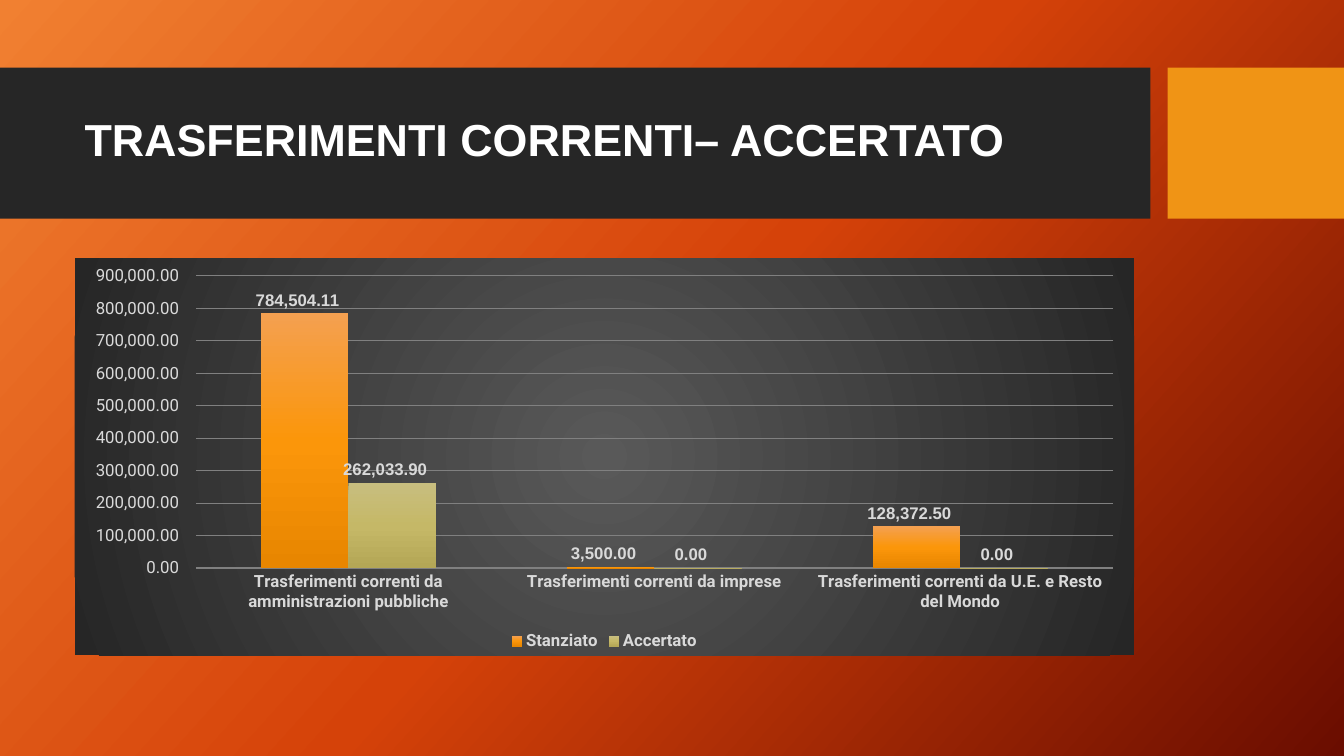
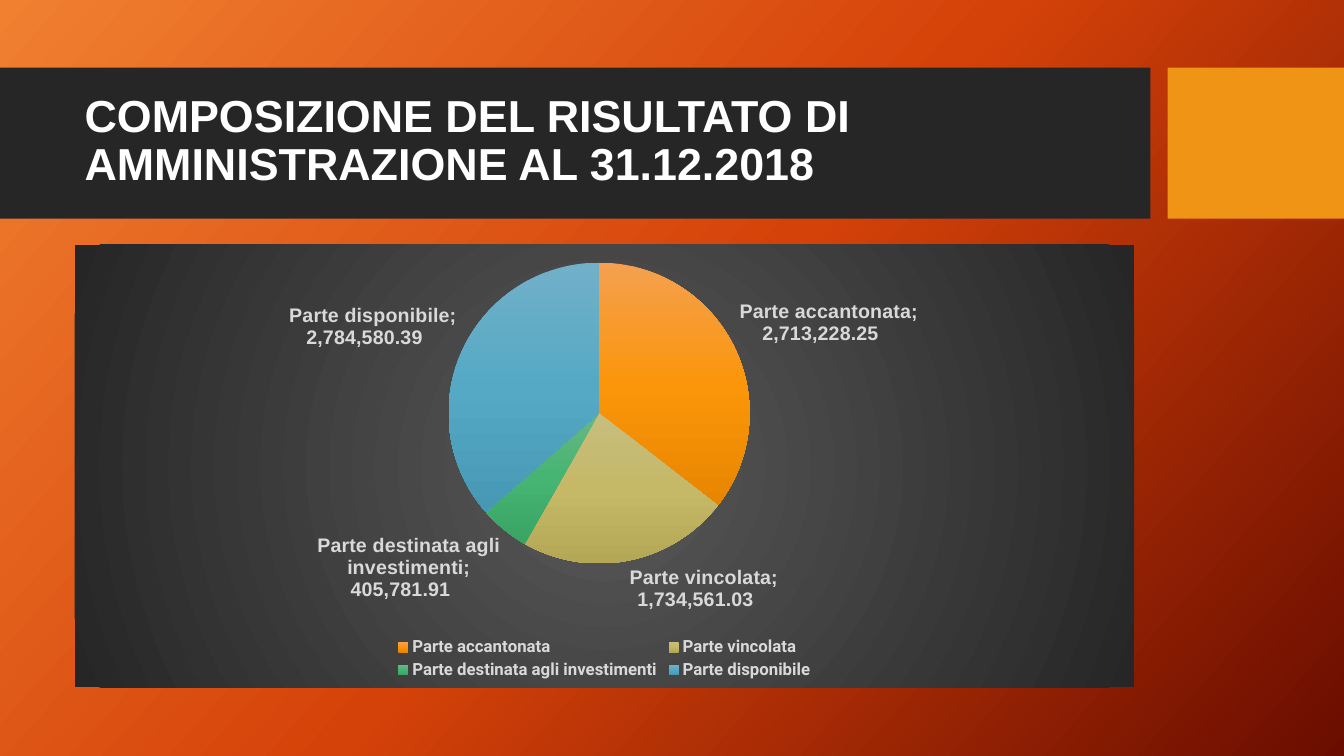
import pptx
import pptx.chart.data
import pptx.dml.color
import pptx.enum.chart
import pptx.enum.shapes
import pptx.enum.text
import pptx.oxml
import pptx.oxml.ns
import pptx.util
from pptx.dml.color import RGBColor
from pptx.oxml.ns import qn
from pptx.util import Inches

WHITE = RGBColor(0xFF, 0xFF, 0xFF)
LIGHT_GREY = RGBColor(0xD9, 0xD9, 0xD9)
GRID_GREY = RGBColor(0x80, 0x80, 0x80)
MID_GREY = RGBColor(0x59, 0x59, 0x59)
CHARCOAL = RGBColor(0x26, 0x26, 0x26)
AMBER = RGBColor(0xF0, 0x94, 0x15)
BACKGROUND = (RGBColor(0xF1, 0x80, 0x31), RGBColor(0xD5, 0x42, 0x09), RGBColor(0x6A, 0x0D, 0x00))
DATA_GRADIENTS = (
    (RGBColor(0xF4, 0xA0, 0x50), RGBColor(0xFB, 0x96, 0x0A), RGBColor(0xE8, 0x86, 0x00)),
    (RGBColor(0xC8, 0xBE, 0x7F), RGBColor(0xC5, 0xB8, 0x67), RGBColor(0xB4, 0xA7, 0x56)),
    (RGBColor(0x67, 0xB8, 0x84), RGBColor(0x46, 0xB4, 0x72), RGBColor(0x3A, 0xA4, 0x64)),
    (RGBColor(0x71, 0xB0, 0xC8), RGBColor(0x55, 0xA9, 0xC5), RGBColor(0x47, 0x98, 0xB4)),
)
NAMESPACES = pptx.oxml.ns.nsdecls("a", "c")
NUMBER_FORMAT = "#,##0.00\\ _€"
LEFT, WIDTH = Inches(0.74), Inches(10.51)


def set_gradient(element, colors, angle=None):
    """Replace the first solid fill with evenly spaced stops; radial without an angle."""
    stops = "".join(
        f'<a:gs pos="{100000 * index // (len(colors) - 1)}"><a:srgbClr val="{color}"/></a:gs>'
        for index, color in enumerate(colors))
    if angle is None:
        direction = ('<a:path path="circle"><a:fillToRect l="50000" t="50000" '
                     'r="50000" b="50000"/></a:path>')
    else:
        direction = f'<a:lin ang="{angle * 60000}" scaled="0"/>'
    solid = element.find(".//" + qn("a:solidFill"))
    solid.getparent().replace(solid, pptx.oxml.parse_xml(
        f'<a:gradFill {NAMESPACES} rotWithShape="1"><a:gsLst>{stops}</a:gsLst>{direction}</a:gradFill>'))


def add_text(slide, text, left, top, width, height, size, color, font="Arial", bold=False):
    box = slide.shapes.add_textbox(left, top, width, height)
    frame = box.text_frame
    frame.word_wrap = True
    frame.vertical_anchor = pptx.enum.text.MSO_ANCHOR.MIDDLE
    paragraph = frame.paragraphs[0]
    paragraph.line_spacing = 0.9
    run = paragraph.add_run()
    run.text = text
    run.font.name, run.font.size, run.font.bold = font, pptx.util.Pt(size), bold
    run.font.color.rgb = color


presentation = pptx.Presentation()
presentation.slide_width, presentation.slide_height = Inches(13.33), Inches(7.5)

# Shared background
master = presentation.slide_master
master.background.fill.solid()
master.background.fill.fore_color.rgb = BACKGROUND[0]
set_gradient(master.element, BACKGROUND, angle=42)

SLIDES = (
    {
        "title": "TRASFERIMENTI CORRENTI– ACCERTATO",
        "type": pptx.enum.chart.XL_CHART_TYPE.COLUMN_CLUSTERED,
        "top": 2.56, "height": 3.94, "label_size": 12,
        "categories": ("Trasferimenti correnti da amministrazioni pubbliche",
                       "Trasferimenti correnti da imprese",
                       "Trasferimenti correnti da U.E. e Resto del Mondo"),
        "series": {"Stanziato": (784504.11, 3500, 128372.5), "Accertato": (262033.9, 0, 0)},
    },
    {
        "title": "COMPOSIZIONE DEL RISULTATO DI AMMINISTRAZIONE AL 31.12.2018",
        "type": pptx.enum.chart.XL_CHART_TYPE.PIE,
        "top": 2.43, "height": 4.39, "label_size": 14,
        "categories": ("Parte accantonata", "Parte vincolata",
                       "Parte destinata agli investimenti", "Parte disponibile"),
        "series": {"Series 1": (2713228.25, 1734561.03, 405781.91, 2784580.39)},
    },
)

for content in SLIDES:
    slide = presentation.slides.add_slide(presentation.slide_layouts[6])
    is_pie = content["type"] == pptx.enum.chart.XL_CHART_TYPE.PIE

    # Title band and accent block
    for left, width, color in ((0, 11.41, CHARCOAL), (11.58, 1.75, AMBER)):
        band = slide.shapes.add_shape(pptx.enum.shapes.MSO_SHAPE.RECTANGLE,
                                      Inches(left), Inches(0.67), Inches(width), Inches(1.5))
        band.shadow.inherit = False
        band.fill.solid()
        band.fill.fore_color.rgb = color
        band.line.fill.background()
    add_text(slide, content["title"], LEFT, Inches(0.82), WIDTH, Inches(1.18),
             size=32, color=WHITE, bold=True)

    # Chart on its dark radial panel
    chart_data = pptx.chart.data.CategoryChartData(number_format=NUMBER_FORMAT)
    chart_data.categories = content["categories"]
    for name, values in content["series"].items():
        chart_data.add_series(name, values)
    chart = slide.shapes.add_chart(content["type"], LEFT, Inches(content["top"]), WIDTH,
                                   Inches(content["height"]), chart_data).chart
    chart.has_title = False
    chart_space = chart.element
    chart_space.find(qn("c:chart")).addnext(pptx.oxml.parse_xml(
        f"<c:spPr {NAMESPACES}><a:solidFill/><a:ln><a:noFill/></a:ln></c:spPr>"))
    set_gradient(chart_space.find(qn("c:spPr")), (MID_GREY, CHARCOAL))
    chart.has_legend = True
    chart.legend.position = pptx.enum.chart.XL_LEGEND_POSITION.BOTTOM
    chart.legend.include_in_layout = False
    plot = chart.plots[0]
    plot.vary_by_categories = is_pie

    # Data labels
    plot.has_data_labels = True
    labels = plot.data_labels
    labels.show_value = True
    labels.show_category_name = is_pie
    labels.number_format = NUMBER_FORMAT
    labels.number_format_is_linked = False
    labels.position = pptx.enum.chart.XL_LABEL_POSITION.OUTSIDE_END

    fonts = [(chart.font, "Roboto", 10, False, WHITE),
             (chart.legend.font, "Roboto", 12, True, LIGHT_GREY),
             (labels.font, "Arial", content["label_size"], True, LIGHT_GREY)]

    # Axes of the column chart, fixed layout of the pie
    if is_pie:
        labels._element.find(qn("c:showBubbleSize")).addnext(
            pptx.oxml.parse_xml(f"<c:separator {NAMESPACES}>; </c:separator>"))
        plot_area = chart_space.find(".//" + qn("c:plotArea"))
        legend = chart_space.find(".//" + qn("c:legend"))
        for parent, index, target, place in (
                (plot_area, 0, '<c:layoutTarget val="inner"/>', (0.35, 0.04, 0.29, 0.68)),
                (legend, 1, "", (0.3, 0.88, 0.4, 0.11))):
            for layout in parent.findall(qn("c:layout")):
                parent.remove(layout)
            modes = '<c:xMode val="edge"/><c:yMode val="edge"/>'
            sizes = "".join(f'<c:{key} val="{value}"/>' for key, value in zip("xywh", place))
            parent.insert(index, pptx.oxml.parse_xml(
                f"<c:layout {NAMESPACES}><c:manualLayout>{target}{modes}{sizes}"
                "</c:manualLayout></c:layout>"))
    else:
        plot.gap_width, plot.overlap = 150, 0
        for axis, bold in ((chart.category_axis, True), (chart.value_axis, False)):
            axis.major_tick_mark = pptx.enum.chart.XL_TICK_MARK.NONE
            axis.format.line.fill.background()
            fonts.append((axis.tick_labels.font, "Roboto", 12, bold, LIGHT_GREY))
        tick_labels = chart.value_axis.tick_labels
        tick_labels.number_format = NUMBER_FORMAT
        tick_labels.number_format_is_linked = False
        grid_line = chart.value_axis.major_gridlines.format.line
        grid_line.color.rgb = GRID_GREY
        grid_line.width = pptx.util.Pt(0.75)

    for font, name, size, bold, color in fonts:
        font.name, font.size, font.bold = name, pptx.util.Pt(size), bold
        font.color.rgb = color

    # Gradient columns or slices
    if is_pie:
        series = plot.series[0]
        parts = [series.points[index] for index in range(len(content["categories"]))]
    else:
        parts = list(plot.series)
    for part, colors in zip(parts, DATA_GRADIENTS):
        part.format.fill.solid()
        part.format.fill.fore_color.rgb = colors[0]
        part.format.line.fill.background()
    elements = series._element.findall(qn("c:dPt")) if is_pie else [part._element for part in parts]
    for element, colors in zip(elements, DATA_GRADIENTS):
        set_gradient(element, colors, angle=90)

presentation.save("out.pptx")
